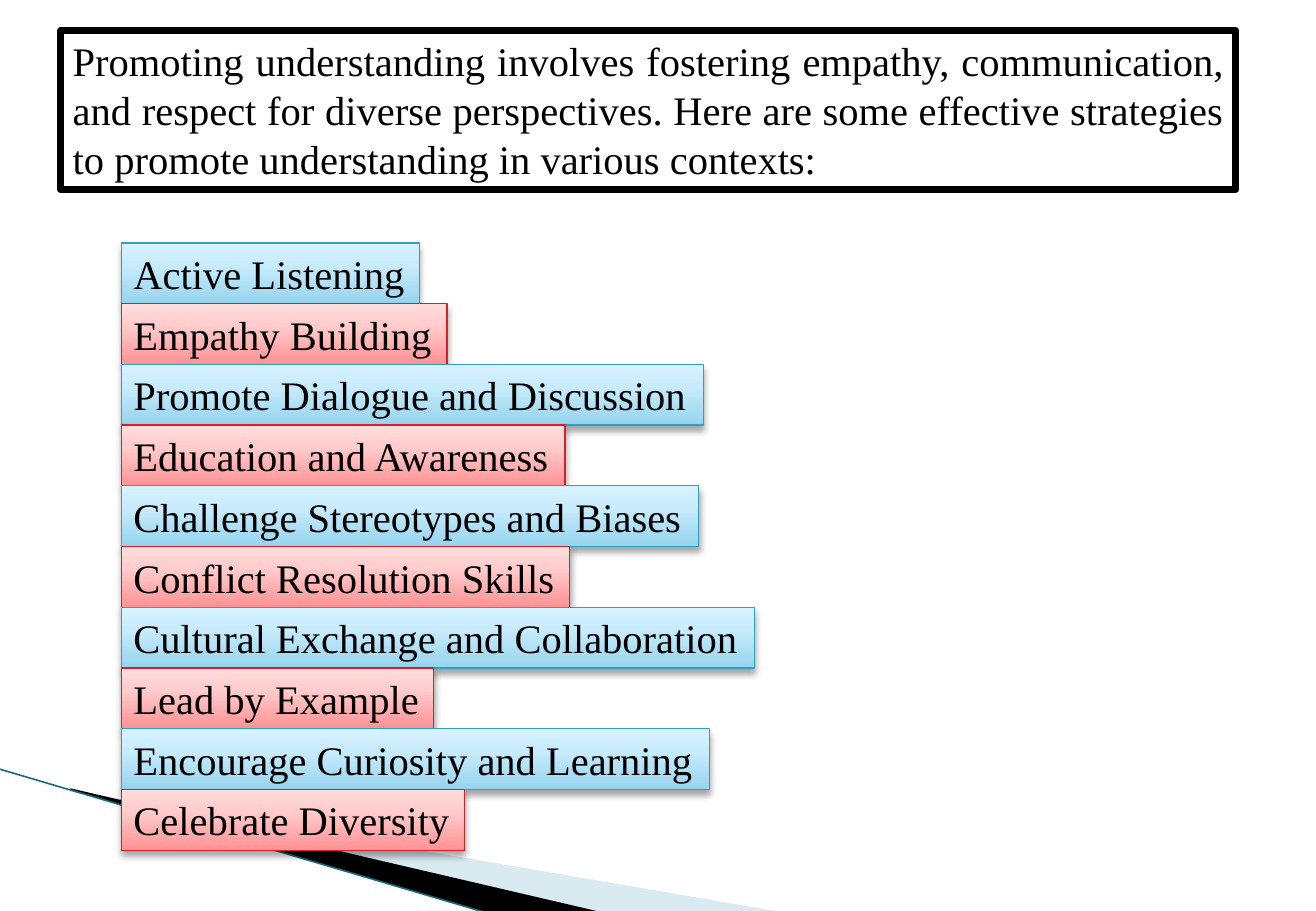
from copy import deepcopy
from dataclasses import dataclass

from lxml.etree import SubElement
from pptx import Presentation
from pptx.dml.color import RGBColor
from pptx.enum.shapes import MSO_CONNECTOR, MSO_SHAPE
from pptx.enum.text import MSO_ANCHOR, MSO_AUTO_SIZE, PP_ALIGN
from pptx.oxml.ns import qn
from pptx.util import Inches, Pt


@dataclass(frozen=True)
class Theme:
    font: str = "Times New Roman"
    size: int = 24
    ink: str = "000000"
    paper: str = "FFFFFF"
    swoosh: str = "A0CBDC"
    edge: str = "1B6A80"
    blue: tuple = ("2DA2BF", "96D4EE", "C9ECFC", "D7F2FF")
    red: tuple = ("DA1F28", "FF9294", "FFCDCD", "FFDCDC")
    stops: tuple = (0, 0.65, 1)


INTRODUCTION = (
    "Promoting understanding involves fostering empathy, communication, "
    "and respect for diverse perspectives. Here are some effective strategies "
    "to promote understanding in various contexts:"
)
STRATEGIES = [
    ("Active Listening", 2.45),
    ("Empathy Building", 2.68),
    ("Promote Dialogue and Discussion", 4.79),
    ("Education and Awareness", 3.65),
    ("Challenge Stereotypes and Biases", 4.75),
    ("Conflict Resolution Skills", 3.69),
    ("Cultural Exchange and Collaboration", 5.21),
    ("Lead by Example", 2.57),
    ("Encourage Curiosity and Learning", 4.84),
    ("Celebrate Diversity", 2.82),
]


class StrategyPage:
    """Draws the elements of the strategies slide in one theme."""

    def __init__(self, page, theme):
        self.page = page
        self.theme = theme

    def swoosh(self, points, color, opacity=100):
        corners = [(Inches(x), Inches(y)) for x, y in points]
        builder = self.page.shapes.build_freeform(*corners[0], scale=1.0)
        builder.add_line_segments(corners[1:], close=True)
        shape = builder.convert_to_shape()
        shape.shadow.inherit = False
        shape.line.fill.background()
        shape.fill.solid()
        shape.fill.fore_color.rgb = RGBColor.from_string(color)
        if opacity < 100:
            tint = shape._element.spPr.find(".//" + qn("a:srgbClr"))
            SubElement(tint, qn("a:alpha"), val=str(opacity * 1000))

    def line(self, start, end, color, width):
        ends = [Inches(value) for value in (*start, *end)]
        connector = self.page.shapes.add_connector(MSO_CONNECTOR.STRAIGHT, *ends)
        connector.line.color.rgb = RGBColor.from_string(color)
        connector.line.width = Pt(width)
        SubElement(connector._element.spPr, qn("a:effectLst"))

    def box(self, text, left, top, width, height, color, weight, wrap, align):
        place = [Inches(value) for value in (left, top, width, height)]
        box = self.page.shapes.add_shape(MSO_SHAPE.RECTANGLE, *place)
        box.shadow.inherit = False
        box.line.color.rgb = RGBColor.from_string(color)
        box.line.width = Pt(weight)
        frame = box.text_frame
        frame.text = text
        frame.word_wrap = wrap
        frame.auto_size = MSO_AUTO_SIZE.SHAPE_TO_FIT_TEXT
        frame.vertical_anchor = MSO_ANCHOR.TOP
        para = frame.paragraphs[0]
        para.alignment = align
        font = para.runs[0].font
        font.name = self.theme.font
        font.size = Pt(self.theme.size)
        font.color.rgb = RGBColor.from_string(self.theme.ink)
        return box

    def header(self, text):
        box = self.box(text, 0.5, 0.25, 9.67, 1.31, self.theme.ink, 4.33,
                       True, PP_ALIGN.JUSTIFY)
        box.fill.solid()
        box.fill.fore_color.rgb = RGBColor.from_string(self.theme.paper)

    def strategy(self, text, top, width, palette):
        outline, *shades = palette
        box = self.box(text, 1, top, width, 0.5, outline, 0.75,
                       False, PP_ALIGN.LEFT)
        box.fill.gradient()
        box.fill.gradient_angle = 90
        properties = box._element.spPr
        stop_list = properties.find(".//" + qn("a:gsLst"))
        stop_list.append(deepcopy(stop_list[-1]))
        for stop, position, shade in zip(box.fill.gradient_stops,
                                         self.theme.stops, shades):
            stop.position = position
            stop.color.rgb = RGBColor.from_string(shade)
        shadow = SubElement(properties.find(qn("a:effectLst")), qn("a:outerShdw"),
                            blurRad=str(Pt(4)), dist=str(Pt(3)),
                            dir="5400000", rotWithShape="0")
        tint = SubElement(shadow, qn("a:srgbClr"), val=self.theme.ink)
        SubElement(tint, qn("a:alpha"), val="35000")


def main():
    theme = Theme()
    deck = Presentation()
    deck.slide_width, deck.slide_height = Inches(10.83), Inches(7.5)
    page = StrategyPage(deck.slides.add_slide(deck.slide_layouts[6]), theme)
    page.swoosh([(0.59, 6.51), (6.44, 7.51), (4.94, 7.51), (0.59, 6.5)],
                theme.swoosh, 40)
    page.swoosh([(0.58, 6.49), (4.95, 7.51), (4.03, 7.52), (0.58, 6.5)],
                theme.ink)
    page.line((-0.01, 6.33), (4.02, 7.52), theme.edge, 0.95)
    page.header(INTRODUCTION)
    for index, (text, width) in enumerate(STRATEGIES):
        palette = theme.red if index % 2 else theme.blue
        page.strategy(text, 2 + index * 0.5, width, palette)
    deck.save("out.pptx")


if __name__ == "__main__":
    main()
